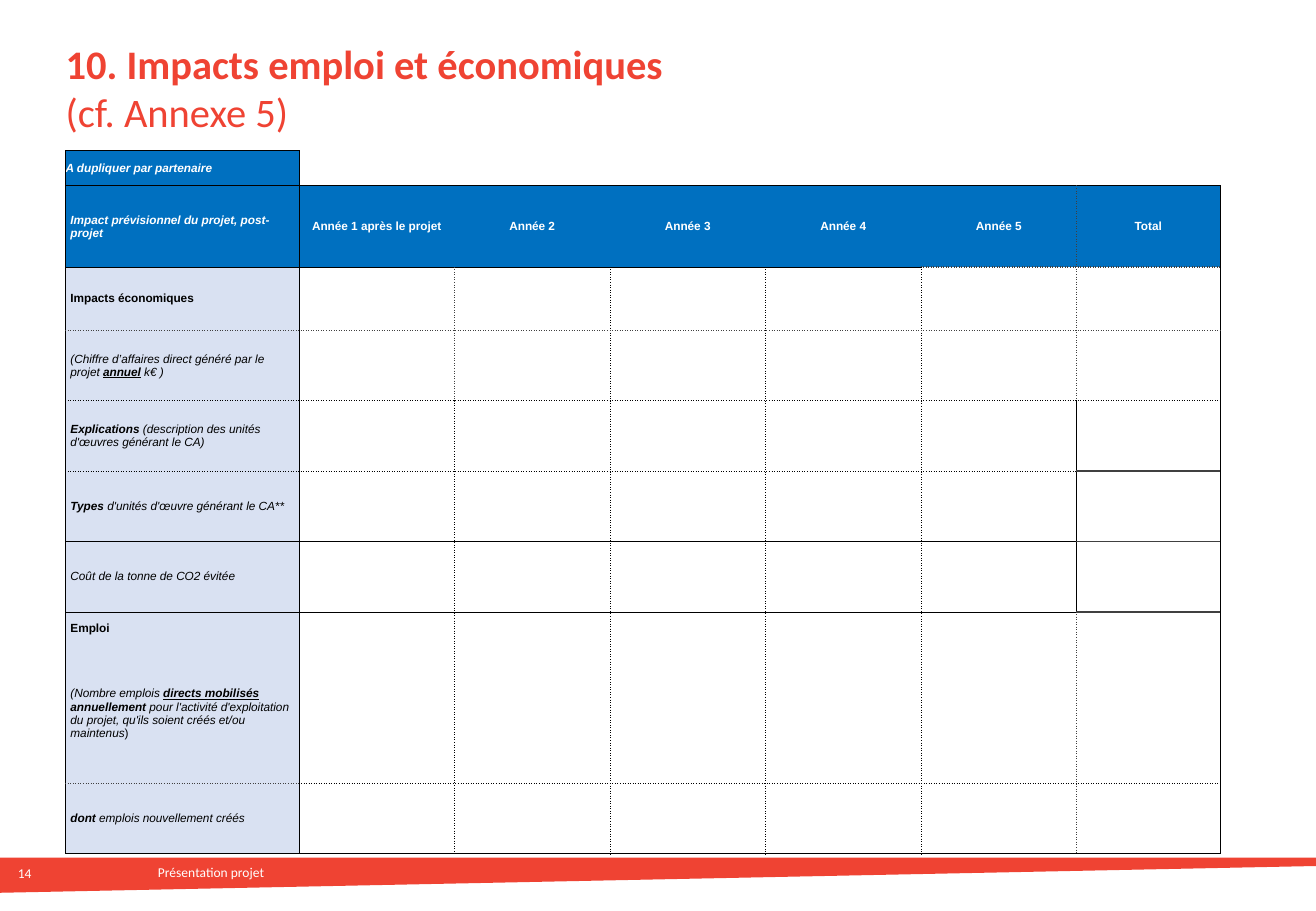
from dataclasses import dataclass

from lxml import etree
from pptx import Presentation
from pptx.dml.color import RGBColor
from pptx.enum import text as tx
from pptx.oxml import ns
from pptx.util import Inches, Pt


@dataclass(frozen=True)
class Theme:
    red: str = "EF4333"
    blue: str = "0070C0"
    pale: str = "D9E1F2"
    white: str = "FFFFFF"
    black: str = "000000"
    grey: str = "404040"
    heading_font: str = "Calibri"
    table_font: str = "Arial"
    title_size: int = 24
    footer_size: int = 8
    table_size: int = 7


THEME = Theme()
LEFT, CENTER, RIGHT = tx.PP_ALIGN.LEFT, tx.PP_ALIGN.CENTER, tx.PP_ALIGN.RIGHT

# Border codes: colour, width in points, dash
BORDERS = {
    "S": (THEME.black, 0.5, "solid"),
    "d": (THEME.black, 0.5, "dot"),
    "g": (THEME.grey, 1, "dot"),
    "y": (THEME.grey, 1, "sysDot"),
    "G": (THEME.grey, 1, "solid"),
}
# One string per horizontal grid line, one code per column
HORIZONTAL = ["S-------", "SSSSSSS-", "SSSSSyy-", "ggggggg-", "ddddddd-", "ddddddG-",
              "SSSSSSG-", "SSSSSSG-", "--------", "gdddddd-", "SSSSSSS-"]
# One string per row, one code per vertical grid line
VERTICAL = (["SS-------", "SS----gS-"] + ["SSgdddgS-"] * 2
            + ["SSddddSS-"] * 3 + ["SSddddgS-"] * 3)

COLUMN_WIDTHS = [1.92] + [1.28] * 5 + [1.18, 0.59]
ROW_HEIGHTS = [0.29, 0.67, 0.52] + [0.58] * 4 + [0.26, 1.15, 0.58]
HEADER_ROW, EMPLOI_ROW, TOTAL_COLUMN = 1, 7, 6

YEARS = ["Année 1 après le projet", "Année 2", "Année 3", "Année 4", "Année 5", "Total"]
# Runs of each row label: text, then b (bold), i (italic), u (underlined)
LABELS = [
    [("A dupliquer par partenaire", "bi")],
    [("Impact prévisionnel du projet, post-projet", "bi")],
    [("Impacts économiques", "b")],
    [("(Chiffre d’affaires direct généré par le projet ", "i"), ("annuel", "biu"),
     (" ", "bi"), ("k€ )", "i")],
    [("Explications ", "bi"), ("(description des unités d'œuvres générant le CA)", "i")],
    [("Types ", "bi"), ("d'unités d'œuvre générant le CA**", "i")],
    [("Coût de la tonne de CO2 évitée", "i")],
    [("Emploi", "b")],
    [("(Nombre emplois ", "i"), ("directs mobilisés", "biu"), (" annuellement ", "bi"),
     ("pour l'activité d'exploitation du projet, qu'ils soient créés et/ou maintenus", "i"),
     (")", "")],
    [("dont ", "bi"), ("emplois nouvellement créés", "i")],
]


def add_run(paragraph, content, flags, font, size, color):
    run = paragraph.add_run()
    run.text = content
    formats = {"name": font, "size": Pt(size), "bold": "b" in flags,
               "italic": "i" in flags, "underline": "u" in flags}
    for attribute, value in formats.items():
        setattr(run.font, attribute, value)
    run.font.color.rgb = RGBColor.from_string(color)


def add_text(slide, box, lines, size, color, align=LEFT, anchor=tx.MSO_ANCHOR.TOP,
             inset=0, wrap=True):
    """Add a text box whose (text, flags) lines are parted by line breaks."""
    frame = slide.shapes.add_textbox(*map(Inches, box)).text_frame
    formats = {"margin_left": 0, "margin_right": 0, "margin_top": Inches(inset),
               "margin_bottom": Inches(inset), "word_wrap": wrap, "vertical_anchor": anchor}
    for attribute, value in formats.items():
        setattr(frame, attribute, value)
    paragraph = frame.paragraphs[0]
    paragraph.alignment = align
    for index, (content, flags) in enumerate(lines):
        if index:
            paragraph.add_line_break()
        add_run(paragraph, content, flags, THEME.heading_font, size, color)


def add_footer_band(slide):
    builder = slide.shapes.build_freeform(0, Inches(7.06))
    corners = [(10.83, 7.06), (10.83, 7.13), (0, 7.35)]
    builder.add_line_segments([(Inches(x), Inches(y)) for x, y in corners], close=True)
    band = builder.convert_to_shape()
    band.shadow.inherit = False
    band.fill.solid()
    band.fill.fore_color.rgb = RGBColor.from_string(THEME.red)
    band.line.fill.background()


def set_borders(cell, codes):
    """Draw the left, right, top and bottom borders, which must precede the fill."""
    properties = cell._tc.get_or_add_tcPr()
    for index, (side, code) in enumerate(zip("LRTB", codes)):
        line = etree.Element(ns.qn(f"a:ln{side}"))
        properties.insert(index, line)
        if code not in BORDERS:
            etree.SubElement(line, ns.qn("a:noFill"))
            continue
        color, width, dash = BORDERS[code]
        line.set("w", str(int(Pt(width))))
        fill = etree.SubElement(line, ns.qn("a:solidFill"))
        etree.SubElement(fill, ns.qn("a:srgbClr"), val=color)
        etree.SubElement(line, ns.qn("a:prstDash"), val=dash)


def cell_fill(row, column):
    if column > TOTAL_COLUMN or (row < HEADER_ROW and column):
        return None
    if row <= HEADER_ROW:
        return THEME.blue
    return THEME.white if column else THEME.pale


def cell_runs(row, column):
    if column == 0:
        return LABELS[row]
    if row == HEADER_ROW and column <= TOTAL_COLUMN:
        return [(YEARS[column - 1], "b")]
    return []


def format_cell(cell, row, column):
    inset = Inches(0.04 if column == 0 and row >= HEADER_ROW else 0)
    for side in ("left", "right", "top", "bottom"):
        setattr(cell, f"margin_{side}", inset)
    cell.vertical_anchor = tx.MSO_ANCHOR.MIDDLE

    fill = cell_fill(row, column)
    if fill:
        cell.fill.solid()
        cell.fill.fore_color.rgb = RGBColor.from_string(fill)
    else:
        cell.fill.background()
    bottom = row + (2 if cell.is_merge_origin else 1)
    set_borders(cell, (VERTICAL[row][column], VERTICAL[row][column + 1],
                       HORIZONTAL[row][column], HORIZONTAL[bottom][column]))

    paragraph = cell.text_frame.paragraphs[0]
    paragraph.alignment = CENTER if column else LEFT
    color = THEME.white if row <= HEADER_ROW else THEME.black
    for content, flags in cell_runs(row, column):
        add_run(paragraph, content, flags, THEME.table_font, THEME.table_size, color)
    end = paragraph._p.get_or_add_endParaRPr()
    end.set("sz", str(THEME.table_size * 100))


def add_impact_table(slide):
    table = slide.shapes.add_table(
        len(ROW_HEIGHTS), len(COLUMN_WIDTHS), Inches(0.54), Inches(1.24),
        Inches(sum(COLUMN_WIDTHS)), Inches(sum(ROW_HEIGHTS))).table
    table.first_row = table.horz_banding = False
    for column, width in zip(table.columns, COLUMN_WIDTHS):
        column.width = Inches(width)
    for row, height in zip(table.rows, ROW_HEIGHTS):
        row.height = Inches(height)
    for column in range(1, TOTAL_COLUMN + 1):
        table.cell(EMPLOI_ROW, column).merge(table.cell(EMPLOI_ROW + 1, column))
    for row in range(len(ROW_HEIGHTS)):
        for column in range(len(COLUMN_WIDTHS)):
            format_cell(table.cell(row, column), row, column)


def main():
    presentation = Presentation()
    presentation.slide_width = Inches(10.83)
    presentation.slide_height = Inches(7.5)
    slide = presentation.slides.add_slide(presentation.slide_layouts[6])

    add_footer_band(slide)
    add_text(slide, (1.3, 7.11, 0.88, 0.13), [("Présentation projet", "")],
             THEME.footer_size, THEME.white, wrap=False)
    add_text(slide, (0.06, 7.12, 0.2, 0.13), [("14", "")], THEME.footer_size, THEME.white,
             align=RIGHT, anchor=tx.MSO_ANCHOR.MIDDLE)
    add_text(slide, (0.54, 0.3, 9.75, 0.84),
             [("10. Impacts emploi et économiques", "b"), ("(cf. Annexe 5)", "")],
             THEME.title_size, THEME.red, anchor=tx.MSO_ANCHOR.MIDDLE, inset=0.05)
    add_impact_table(slide)
    presentation.save("out.pptx")


if __name__ == "__main__":
    main()
